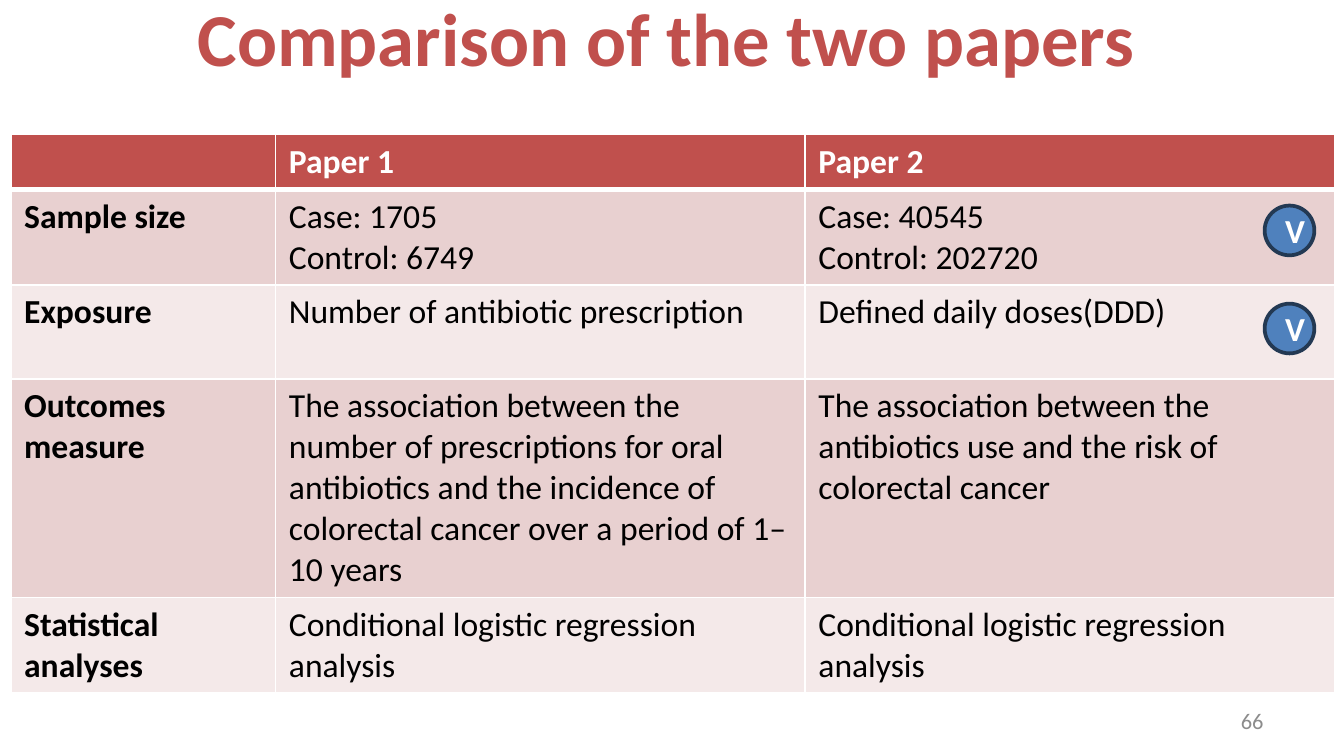
"""Build a slide that compares two papers in a table."""
from dataclasses import dataclass

from lxml import etree
from pptx import Presentation
from pptx.dml.color import RGBColor
from pptx.enum.shapes import MSO_SHAPE
from pptx.enum.text import MSO_ANCHOR, PP_ALIGN
from pptx.oxml.ns import qn
from pptx.util import Inches, Pt

OVAL = MSO_SHAPE.OVAL
TOP, MIDDLE = MSO_ANCHOR.TOP, MSO_ANCHOR.MIDDLE
LEFT, CENTER, RIGHT = PP_ALIGN.LEFT, PP_ALIGN.CENTER, PP_ALIGN.RIGHT
FONT = "Calibri"
RED = RGBColor(0xC0, 0x50, 0x4D)
BANDS = (RGBColor(0xE8, 0xD0, 0xD0), RGBColor(0xF4, 0xE9, 0xE9))
BLUE = RGBColor(0x4F, 0x81, 0xBD)
NAVY = RGBColor(0x23, 0x39, 0x53)
GRAY = RGBColor(0x8C, 0x8C, 0x8C)
WHITE = RGBColor(0xFF, 0xFF, 0xFF)
BLACK = RGBColor(0, 0, 0)
WIDTH = Inches(10)
HEIGHT = WIDTH * 9 // 16
TABLE_LEFT, TABLE_TOP = Inches(0.08), Inches(1)
UNIT = Inches(1.97)
COLUMN_SHARES = (1, 2, 2)
HEADER_HEIGHT, ROW_HEIGHT, TALL_HEIGHT = Inches(0.41), Inches(0.7), Inches(1.1)
MARK_LEFT, MARK_SIZE = Inches(9.41), Inches(0.37)
MARK_TOPS = (Inches(2.26), Inches(1.53))


@dataclass(frozen=True)
class Row:
    """One row of the comparison."""
    label: str
    first: str
    second: str
    height: int = ROW_HEIGHT


ROWS = (
    Row("", "Paper 1", "Paper 2", HEADER_HEIGHT),
    Row("Sample size", "Case: 1705\nControl: 6749", "Case: 40545\nControl: 202720"),
    Row("Exposure", "Number of antibiotic prescription", "Defined daily doses(DDD)"),
    Row("Outcomes measure",
        "The association between the number of prescriptions for oral antibiotics "
        "and the incidence of colorectal cancer over a period of 1–10 years",
        "The association between the antibiotics use and the risk of  colorectal cancer",
        TALL_HEIGHT),
    Row("Statistical analyses", "Conditional logistic regression analysis",
        "Conditional logistic regression analysis"),
)


def write(tf, text: str, size: int, color: RGBColor, bold: bool = False,
          align: PP_ALIGN = LEFT) -> None:
    """Fill a text frame with uniformly formatted paragraphs."""
    tf.text = text
    for p in tf.paragraphs:
        p.alignment = align
        p.font.name, p.font.size, p.font.bold = FONT, Pt(size), bold
        p.font.color.rgb = color


def set_borders(cell, top: int, bottom: int) -> None:
    """Give a cell white borders, with the top and bottom widths in points."""
    props = cell._tc.get_or_add_tcPr()
    sides = (("a:lnL", 1), ("a:lnR", 1), ("a:lnT", top), ("a:lnB", bottom))
    for i, (tag, width) in enumerate(sides):
        line = etree.Element(qn(tag), w=str(Pt(width)))
        fill = etree.SubElement(line, qn("a:solidFill"))
        etree.SubElement(fill, qn("a:srgbClr"), val=str(WHITE))
        props.insert(i, line)


def add_title(s) -> None:
    """Place and format the title placeholder."""
    sp = s.shapes.title
    sp.left, sp.top = Inches(1.37), Inches(-0.11)
    sp.width, sp.height = Inches(7.25), Inches(0.77)
    tf = sp.text_frame
    tf.word_wrap, tf.vertical_anchor = False, TOP
    write(tf, "Comparison of the two papers", 40, RED, True)


def add_comparison(s) -> None:
    """Draw the table, banding the rows below its header."""
    table = s.shapes.add_table(
        len(ROWS), len(COLUMN_SHARES), TABLE_LEFT, TABLE_TOP,
        UNIT * sum(COLUMN_SHARES), sum(row.height for row in ROWS)).table
    for column, share in zip(table.columns, COLUMN_SHARES):
        column.width = UNIT * share
    for i, row in enumerate(ROWS):
        table.rows[i].height = row.height
        header = i == 0
        for j, text in enumerate((row.label, row.first, row.second)):
            cell = table.cell(i, j)
            cell.fill.solid()
            cell.fill.fore_color.rgb = RED if header else BANDS[(i - 1) % 2]
            set_borders(cell, 3 if i == 1 else 1, 3 if header else 1)
            write(cell.text_frame, text, 18, WHITE if header else BLACK, header or j == 0)


def add_mark(s, top: int) -> None:
    """Draw a round V mark near the right edge of the table."""
    sp = s.shapes.add_shape(OVAL, MARK_LEFT, top, MARK_SIZE, MARK_SIZE)
    sp.shadow.inherit = False
    sp.fill.solid()
    sp.fill.fore_color.rgb = BLUE
    sp.line.color.rgb, sp.line.width = NAVY, Pt(2)
    sp.text_frame.vertical_anchor = MIDDLE
    write(sp.text_frame, "V", 18, WHITE, True, CENTER)


def add_page_number(s) -> None:
    """Write the page number at the bottom right."""
    tf = s.shapes.add_textbox(Inches(7.17), Inches(5.21), Inches(2.33), Inches(0.3)).text_frame
    tf.word_wrap, tf.vertical_anchor = True, MIDDLE
    write(tf, "66", 12, GRAY, align=RIGHT)


def main() -> None:
    """Build and save the presentation."""
    prs = Presentation()
    prs.slide_width, prs.slide_height = WIDTH, HEIGHT
    s = prs.slides.add_slide(prs.slide_layouts.get_by_name("Title Only"))
    add_title(s)
    add_comparison(s)
    add_page_number(s)
    for top in MARK_TOPS:
        add_mark(s, top)
    prs.save("out.pptx")


if __name__ == "__main__":
    main()
